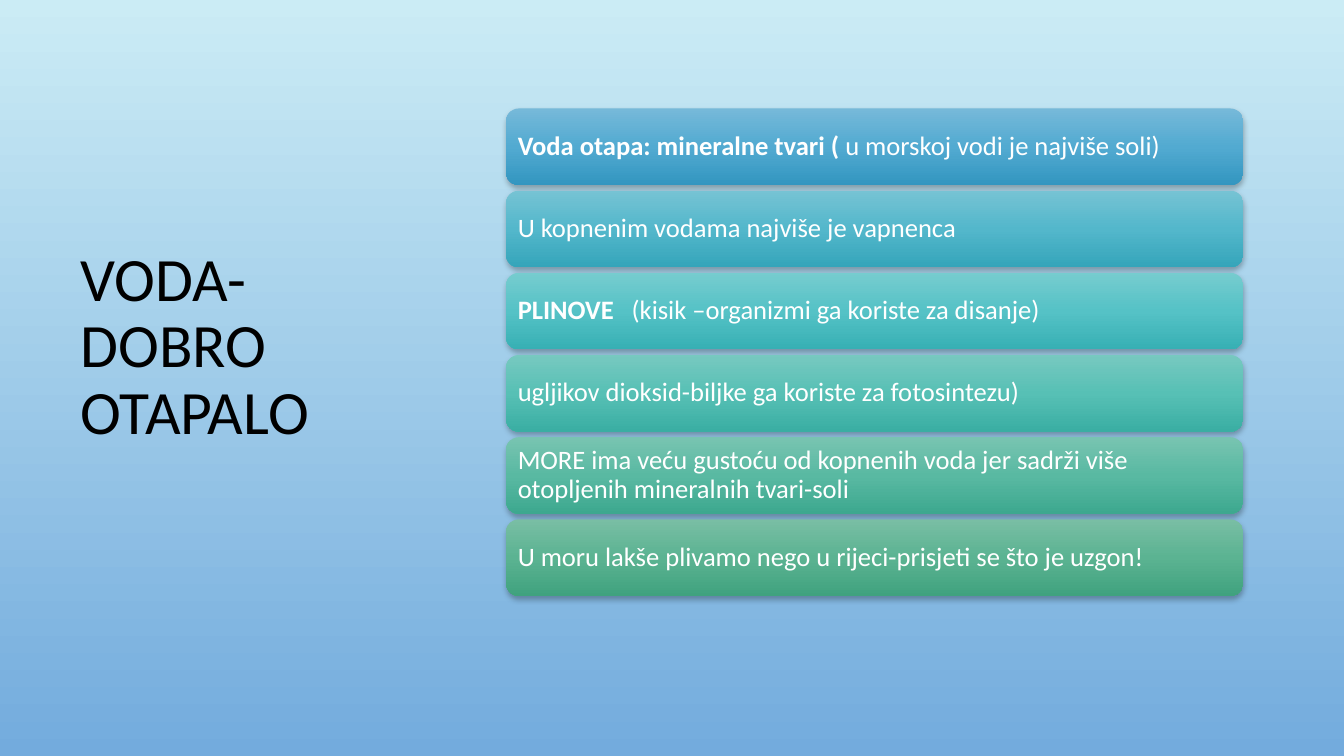
from copy import deepcopy
from dataclasses import dataclass

from lxml.etree import SubElement
from pptx import Presentation
from pptx.dml.color import RGBColor
from pptx.enum.shapes import MSO_SHAPE
from pptx.enum.text import MSO_ANCHOR, MSO_AUTO_SIZE, PP_ALIGN
from pptx.oxml.ns import qn
from pptx.util import Pt


@dataclass(frozen=True)
class Theme:
    font: str = "Calibri"
    title_size: float = 44
    card_size: float = 19
    title_color: str = "000000"
    card_text: str = "FFFFFF"
    shadow: str = "000000"
    background: tuple = ("CBECF5", "73ABDD")
    card_fills: tuple = (
        ("76B9D9", "52AAD1", "3396C0"),
        ("76C3D4", "53B7CB", "35A5BA"),
        ("76CCCF", "55C2C6", "37B0B4"),
        ("77C9C0", "57C0B5", "3AAEA3"),
        ("78C4B1", "59B9A2", "3DA88F"),
        ("79BEA4", "5BB392", "40A27E"),
    )


class SlideBuilder:
    def __init__(self, slide, theme):
        self.slide = slide
        self.theme = theme

    def gradient(self, fill, element, colors):
        fill.gradient()
        fill.gradient_angle = 270
        stop_list = element.find(".//" + qn("a:gsLst"))
        while len(stop_list) < len(colors):
            stop_list.append(deepcopy(stop_list[0]))
        for index, (stop, color) in enumerate(zip(fill.gradient_stops, colors)):
            stop.color.rgb = RGBColor.from_string(color)
            stop.position = index / (len(colors) - 1)

    def background(self):
        fill = self.slide.background.fill
        self.gradient(fill, self.slide._element, self.theme.background)

    def format_text(self, paragraph, size, color):
        paragraph.alignment = PP_ALIGN.LEFT
        paragraph.line_spacing = 0.9
        for run in paragraph.runs:
            run.font.name = self.theme.font
            run.font.size = Pt(size)
            run.font.color.rgb = RGBColor.from_string(color)

    def title(self, text, left, top, width, height):
        shape = self.slide.shapes.title
        shape.left, shape.top = Pt(left), Pt(top)
        shape.width, shape.height = Pt(width), Pt(height)
        text_frame = shape.text_frame
        text_frame.text = text
        text_frame.word_wrap = True
        text_frame.auto_size = MSO_AUTO_SIZE.NONE
        text_frame.vertical_anchor = MSO_ANCHOR.MIDDLE
        self.format_text(text_frame.paragraphs[0], self.theme.title_size, self.theme.title_color)

    def soft_shadow(self, shape):
        shape.shadow.inherit = False
        effects = shape._element.spPr.find(qn("a:effectLst"))
        shadow = SubElement(effects, qn("a:outerShdw"), blurRad=str(Pt(4)), dist=str(Pt(2)),
                            dir="5400000", algn="ctr", rotWithShape="0")
        color = SubElement(shadow, qn("a:srgbClr"), val=self.theme.shadow)
        SubElement(color, qn("a:alpha"), val="28000")

    def tab_stop(self, paragraph, position):
        properties = paragraph._p.get_or_add_pPr()
        tabs = SubElement(properties, qn("a:tabLst"))
        SubElement(tabs, qn("a:tab"), pos=str(Pt(position)), algn="l")

    def card(self, bold_text, plain_text, colors, left, top, width, height):
        shape = self.slide.shapes.add_shape(
            MSO_SHAPE.ROUNDED_RECTANGLE, Pt(left), Pt(top), Pt(width), Pt(height))
        self.gradient(shape.fill, shape._element, colors)
        shape.line.fill.background()
        self.soft_shadow(shape)
        text_frame = shape.text_frame
        text_frame.word_wrap = True
        text_frame.vertical_anchor = MSO_ANCHOR.MIDDLE
        text_frame.margin_left = text_frame.margin_right = Pt(5.7)
        text_frame.margin_top = text_frame.margin_bottom = Pt(5.7)
        paragraph = text_frame.paragraphs[0]
        if "\t" in bold_text:
            self.tab_stop(paragraph, 81.4)
        for text, bold in ((bold_text, True), (plain_text, False)):
            if text:
                run = paragraph.add_run()
                run.text = text
                run.font.bold = bold
        self.format_text(paragraph, self.theme.card_size, self.theme.card_text)


CARDS = (
    ("Voda otapa: mineralne tvari ( ", "u morskoj vodi je najviše soli)"),
    ("", "U kopnenim vodama najviše je vapnenca"),
    ("PLINOVE\t", "(kisik –organizmi ga koriste za disanje)"),
    ("", "ugljikov dioksid-biljke ga koriste za fotosintezu)"),
    ("", "MORE ima veću gustoću od kopnenih voda jer sadrži više otopljenih mineralnih tvari-soli"),
    ("", "U moru lakše plivamo nego u rijeci-prisjeti se što je uzgon!"),
)
CARD_LEFT, CARD_TOP, CARD_WIDTH, CARD_HEIGHT = 361.5, 77.5, 526.5, 54.7
CARD_STEP = 58.7


def main():
    presentation = Presentation()
    presentation.slide_width, presentation.slide_height = Pt(960), Pt(540)
    slide = presentation.slides.add_slide(presentation.slide_layouts[5])
    theme = Theme()
    builder = SlideBuilder(slide, theme)
    builder.background()
    builder.title("VODA-DOBRO OTAPALO", 50.4, 103.7, 224, 289.4)
    for index, ((bold_text, plain_text), colors) in enumerate(zip(CARDS, theme.card_fills)):
        builder.card(bold_text, plain_text, colors, CARD_LEFT, CARD_TOP + index * CARD_STEP,
                     CARD_WIDTH, CARD_HEIGHT)
    presentation.save("out.pptx")


if __name__ == "__main__":
    main()
